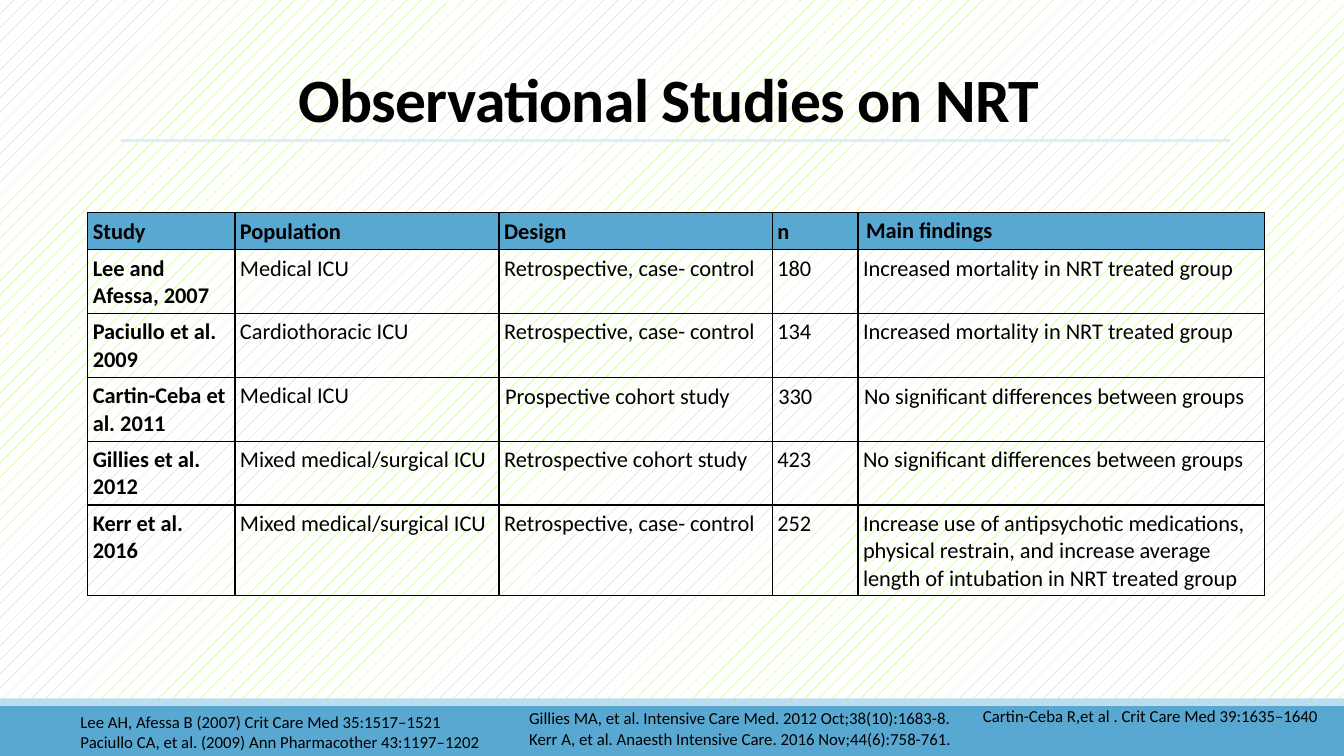
"""Build a slide with a table of observational studies on NRT."""
from lxml.etree import SubElement
from pptx import Presentation
from pptx.dml.color import RGBColor
from pptx.enum.dml import MSO_PATTERN
from pptx.enum.shapes import MSO_CONNECTOR, MSO_SHAPE
from pptx.enum.text import MSO_ANCHOR, MSO_AUTO_SIZE, PP_ALIGN
from pptx.oxml import parse_xml
from pptx.oxml.ns import nsdecls, qn
from pptx.util import Inches, Pt

BLACK = RGBColor(0x00, 0x00, 0x00)
WHITE = RGBColor(0xFF, 0xFF, 0xFF)
GREEN = RGBColor(0xA7, 0xEA, 0x52)
BLUE = RGBColor(0x59, 0xA8, 0xD1)
LIGHT = RGBColor(0xBD, 0xDC, 0xED)
PALE = RGBColor(0xDE, 0xEE, 0xF6)


def style(para, size, bold=False):
    for run in para.runs:
        run.font.name = "Calibri"
        run.font.size = Pt(size)
        run.font.bold = bold
        run.font.color.rgb = BLACK


def add_text(left, top, width, height, text, size, bold=False):
    box = slide.shapes.add_textbox(Inches(left), Inches(top), Inches(width), Inches(height))
    frame = box.text_frame
    frame.word_wrap = True
    frame.text = text
    style(frame.paragraphs[0], size, bold)
    return frame


deck = Presentation()
deck.slide_width = Inches(13.33)
deck.slide_height = Inches(7.5)
slide = deck.slides.add_slide(deck.slide_layouts[6])

back = slide.background.fill
back.patterned()
back.pattern = MSO_PATTERN.PERCENT_5
back.fore_color.rgb = GREEN
back.back_color.rgb = WHITE

for top, height, color in [(7, 0.5, BLUE), (6.93, 0.07, LIGHT)]:
    band = slide.shapes.add_shape(
        MSO_SHAPE.RECTANGLE, 0, Inches(top), Inches(13.33), Inches(height))
    band.shadow.inherit = False
    band.fill.solid()
    band.fill.fore_color.rgb = color
    band.line.fill.background()

rule = slide.shapes.add_connector(
    MSO_CONNECTOR.STRAIGHT, Inches(1.2), Inches(1.39), Inches(12.2), Inches(1.39))
rule.line.color.rgb = PALE
rule.line.width = Pt(2.25)
SubElement(rule._element.spPr, qn("a:effectLst"))

title = add_text(1.2, 0.31, 11, 1.08, "Observational Studies on NRT ", 44, True)
title.vertical_anchor = MSO_ANCHOR.BOTTOM
head = title.paragraphs[0]
head.alignment = PP_ALIGN.CENTER
head.line_spacing = 0.85
head.runs[0].font._element.set("spc", "-50")

studies = [
    ["Study", "Population", "Design", "n", "Main findings"],
    ["Lee and Afessa, 2007", "Medical ICU", "Retrospective, case- control", "180",
     "Increased mortality in NRT treated group"],
    ["Paciullo et al. 2009", "Cardiothoracic ICU", "Retrospective, case- control", "134",
     "Increased mortality in NRT treated group"],
    ["Cartin-Ceba et al. 2011", "Medical ICU", "Prospective cohort study", "330",
     "No significant differences between groups"],
    ["Gillies et al. 2012", "Mixed medical/surgical ICU", "Retrospective cohort study", "423",
     "No significant differences between groups"],
    ["Kerr et al. 2016", "Mixed medical/surgical ICU", "Retrospective, case- control", "252",
     "Increase use of antipsychotic medications, physical restrain, and increase average "
     "length of intubation in NRT treated group"],
]
widths = [1.46, 2.62, 2.71, 0.85, 4.03]
heights = [0.33, 0.41, 0.45, 0.45, 0.44, 0.64]
pads = {(0, 4): (0.08, 0.04)} | {(3, col): (0.06, 0.06) for col in (2, 3, 4)}

holder = slide.shapes.add_table(
    len(heights), len(widths), Inches(0.87), Inches(2.11), Inches(11.66), Inches(3.85))
table = holder.table
table.horz_banding = False
for column, width in zip(table.columns, widths):
    column.width = Inches(width)
for row, height in zip(table.rows, heights):
    row.height = Inches(height)
holder.height = Inches(3.85)

for r, study in enumerate(studies):
    for c, text in enumerate(study):
        cell = table.cell(r, c)
        side, edge = pads.get((r, c), (0.05, 0.05))
        cell.margin_left = cell.margin_right = Inches(side)
        cell.margin_top = cell.margin_bottom = Inches(edge)
        cell.text_frame.text = text
        style(cell.text_frame.paragraphs[0], 16, r == 0 or c == 0)
        if r == 0:
            cell.fill.solid()
            cell.fill.fore_color.rgb = BLUE
        else:
            cell.fill.background()
        props = cell._tc.get_or_add_tcPr()
        for spot, tag in enumerate(["lnL", "lnR", "lnT", "lnB"]):
            props.insert(spot, parse_xml(
                f'<a:{tag} {nsdecls("a")} w="{Pt(1)}"><a:solidFill>'
                f'<a:srgbClr val="{BLACK}"/></a:solidFill></a:{tag}>'))

sources = [
    (5.15, 6.97, 6.66, "Gillies MA, et al. Intensive Care Med. 2012 Oct;38(10):1683-8."),
    (0.7, 7.01, 6.66, "Lee AH, Afessa B (2007) Crit Care Med 35:1517–1521"),
    (0.7, 7.21, 6.66, "Paciullo CA, et al. (2009) Ann Pharmacother 43:1197–1202"),
    (5.15, 7.18, 6.66, "Kerr A, et al. Anaesth Intensive Care. 2016 Nov;44(6):758-761."),
    (9.65, 6.95, 3.68, "Cartin-Ceba R,et al . Crit Care Med 39:1635–1640"),
]
for left, top, width, text in sources:
    note = add_text(left, top, width, 0.3, text, 12)
    note.auto_size = MSO_AUTO_SIZE.SHAPE_TO_FIT_TEXT

deck.save("out.pptx")
